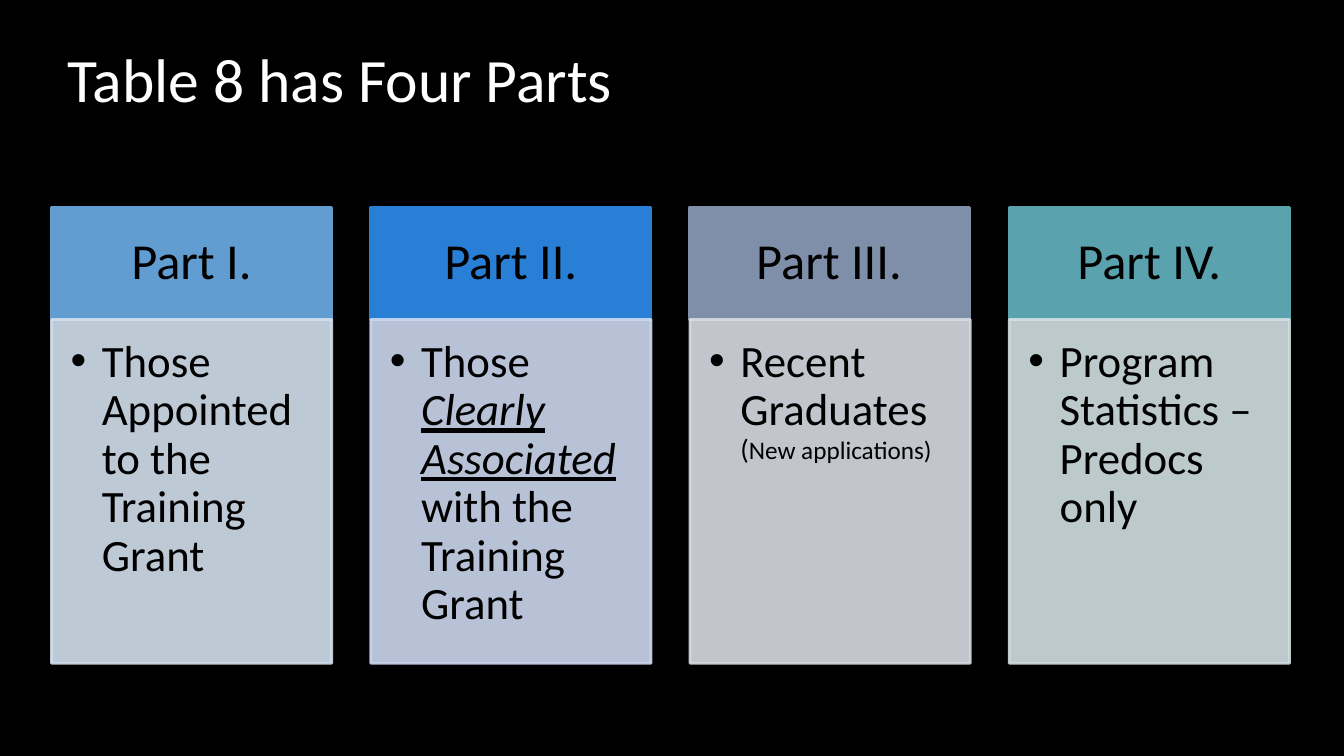
from dataclasses import dataclass

from lxml import etree
from pptx import Presentation
from pptx import util as u
from pptx.dml.color import RGBColor
from pptx.enum import shapes, text
from pptx.oxml.ns import qn


@dataclass(frozen=True)
class Theme:
    font: str = "Calibri"
    background: str = "000000"
    title_color: str = "FFFFFF"
    ink: str = "000000"
    title_size: int = 44
    header_size: int = 36
    body_size: int = 32
    paren_size: int = 20
    note_size: int = 18
    border: int = 2
    body_opacity: int = 90


THEME = Theme()
EMPHASIS = {"italic": True, "underline": True}

# Header, header colour, body colour, header shift, body runs
PARTS = [
    ("Part I.", "629DD1", "D3DFEE", 0,
     [("Those Appointed to the Training Grant", {})]),
    ("Part II.", "297FD5", "CDD8EF", 0,
     [("Those ", {}), ("Clearly Associated", EMPHASIS),
      (" with the Training Grant", {})]),
    ("Part III.", "7F8FA9", "D8DBE2", -0.01,
     [("Recent Graduates ", {}), ("(", {"size": u.Pt(THEME.paren_size)}),
      ("New applications)", {"size": u.Pt(THEME.note_size)})]),
    ("Part IV.", "5AA2AE", "D2E0E3", 0,
     [("Program Statistics – Predocs only", {})]),
]

# Column grid, in inches
LEFT, LAST_LEFT, WIDTH = 0.51, 10.01, 2.78
HEADER_TOP, HEADER_HEIGHT = 2.06, 1.11
BODY_TOP, BODY_HEIGHT = 3.17, 3.41
PITCH = (LAST_LEFT - LEFT) / (len(PARTS) - 1)


def set_format(target, values):
    for name, value in values.items():
        setattr(target, name, value)


def set_frame(frame, anchor, insets):
    set_format(frame, {"word_wrap": True, "vertical_anchor": anchor,
                       "auto_size": text.MSO_AUTO_SIZE.NONE})
    for side, inset in zip(("left", "top", "right", "bottom"), insets):
        setattr(frame, f"margin_{side}", u.Inches(inset))


def add_span(para, wording, size, color, extra=None):
    span = para.add_run()
    span.text = wording
    set_format(span.font, {"name": THEME.font, "size": u.Pt(size), **(extra or {})})
    span.font.color.rgb = RGBColor.from_string(color)


def set_opacity(fill_color, percent):
    for color in fill_color.iter(qn("a:srgbClr")):
        etree.SubElement(color, qn("a:alpha"), val=str(percent * 1000))


def add_bullet(para, indent):
    props = para._p.get_or_add_pPr()
    props.set("marL", str(u.Inches(indent)))
    props.set("indent", str(-u.Inches(indent)))
    etree.SubElement(props, qn("a:buFont"), typeface="Arial")
    etree.SubElement(props, qn("a:buChar"), char="•")


def add_panel(page, left, top, height, color):
    panel = page.shapes.add_shape(
        shapes.MSO_SHAPE.RECTANGLE, u.Inches(left), u.Inches(top),
        u.Inches(WIDTH), u.Inches(height))
    panel.shadow.inherit = False
    panel.fill.solid()
    panel.fill.fore_color.rgb = RGBColor.from_string(color)
    panel.line.color.rgb = RGBColor.from_string(color)
    panel.line.width = u.Pt(THEME.border)
    return panel


def add_header(page, left, wording, color):
    panel = add_panel(page, left, HEADER_TOP, HEADER_HEIGHT, color)
    set_frame(panel.text_frame, text.MSO_ANCHOR.MIDDLE, (0.28, 0.16, 0.28, 0.16))
    para = panel.text_frame.paragraphs[0]
    set_format(para, {"alignment": text.PP_ALIGN.CENTER, "line_spacing": 0.9})
    add_span(para, wording, THEME.header_size, THEME.ink)


def add_body(page, left, spans, color):
    panel = add_panel(page, left, BODY_TOP, BODY_HEIGHT, color)
    set_opacity(panel._element.spPr, THEME.body_opacity)
    set_frame(panel.text_frame, text.MSO_ANCHOR.TOP, (0.19, 0.19, 0.25, 0.28))
    para = panel.text_frame.paragraphs[0]
    set_format(para, {"alignment": text.PP_ALIGN.LEFT, "line_spacing": 0.9,
                      "level": 1})
    add_bullet(para, 0.31)
    for wording, extra in spans:
        add_span(para, wording, THEME.body_size, THEME.ink, extra)


def set_title(page, wording):
    title = page.shapes.title
    set_format(title, {"left": u.Inches(0.67), "top": u.Inches(0.3),
                       "width": u.Inches(12.31), "height": u.Inches(0.84)})
    set_frame(title.text_frame, text.MSO_ANCHOR.BOTTOM, (0, 0, 0, 0))
    para = title.text_frame.paragraphs[0]
    set_format(para, {"alignment": text.PP_ALIGN.LEFT, "line_spacing": u.Pt(28)})
    add_span(para, wording, THEME.title_size, THEME.title_color)


def main():
    deck = Presentation()
    set_format(deck, {"slide_width": u.Inches(13.33), "slide_height": u.Inches(7.5)})
    page = deck.slides.add_slide(deck.slide_layouts.get_by_name("Title Only"))
    page.background.fill.solid()
    page.background.fill.fore_color.rgb = RGBColor.from_string(THEME.background)

    set_title(page, "Table 8 has Four Parts")

    # One column per part
    for index, (name, header_color, body_color, shift, spans) in enumerate(PARTS):
        left = LEFT + index * PITCH
        add_header(page, left + shift, name, header_color)
        add_body(page, left, spans, body_color)

    deck.save("out.pptx")


if __name__ == "__main__":
    main()
